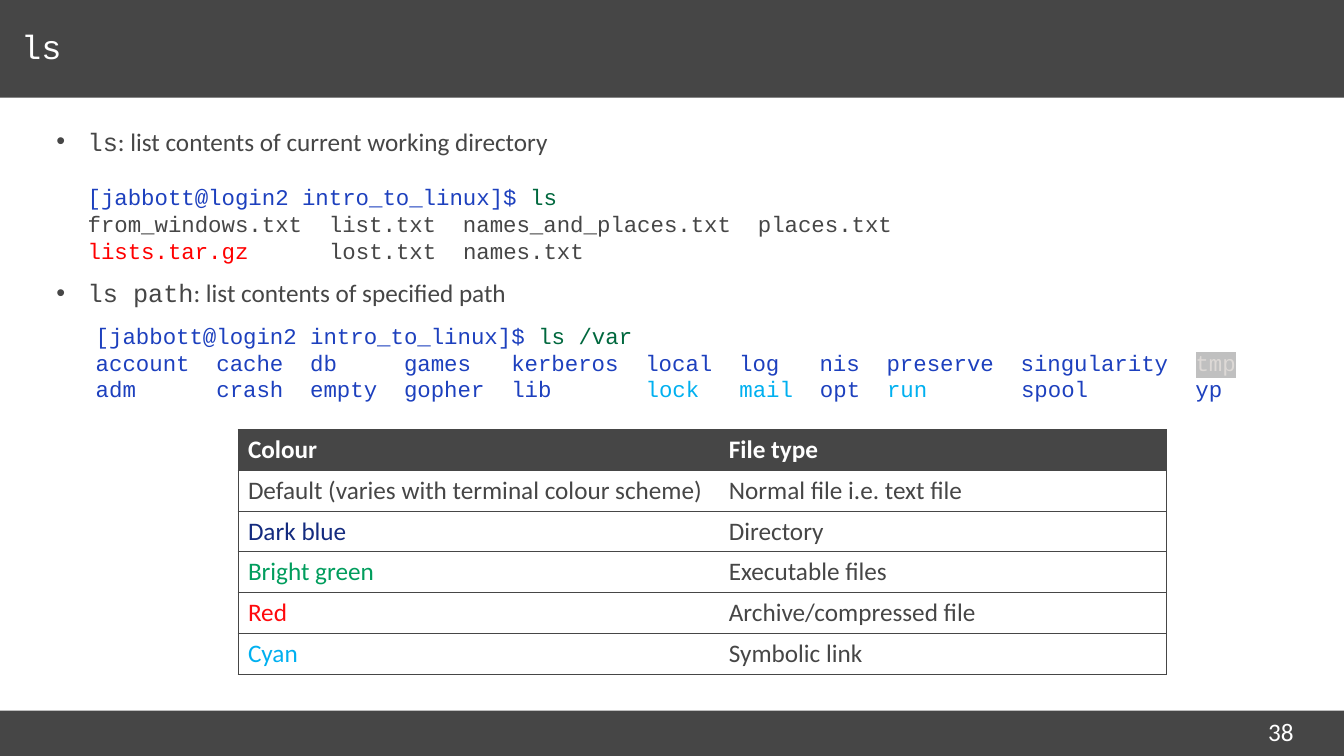
from copy import deepcopy
from lxml import etree
from pptx import Presentation
from pptx import util as u
from pptx.dml.color import RGBColor
from pptx.enum import shapes, text
from pptx.oxml import ns

GREY = RGBColor(0x46, 0x46, 0x46)
WHITE = RGBColor(0xFF, 0xFF, 0xFF)
PALE = RGBColor(0xDD, 0xD9, 0xD6)
SILVER = RGBColor(0xC0, 0xC0, 0xC0)
BLUE = RGBColor(0x1D, 0x40, 0xBE)
NAVY = RGBColor(0x14, 0x2B, 0x7F)
CYAN = RGBColor(0x00, 0xB0, 0xF0)
PINE = RGBColor(0x00, 0x68, 0x3E)
GREEN = RGBColor(0x01, 0x9D, 0x5D)
RED = RGBColor(0xFF, 0x00, 0x00)
SCARLET = RGBColor(0xFF, 0x0A, 0x0D)

SANS = "Calibri"
MONO = "Courier New"
PROMPT = "[jabbott@login2 intro_to_linux]$ "


def add(parent, tag, **attrs):
    return etree.SubElement(parent, ns.qn(tag), attrs)


class Page:
    """Style and current slide."""

    def __init__(self, deck):
        self.slide = deck.slides.add_slide(deck.slide_layouts[6])

    def style(self, run, font=SANS, size=18, color=GREY, bold=False):
        run.font.name = font
        run.font.size = u.Pt(size)
        run.font.bold = bold
        run.font.color.rgb = color

    def bar(self, top, height):
        bar = self.slide.shapes.add_shape(
            shapes.MSO_SHAPE.RECTANGLE, 0, u.Inches(top),
            u.Inches(13.33), u.Inches(height))
        bar.shadow.inherit = False
        bar.fill.solid()
        bar.fill.fore_color.rgb = GREY
        bar.line.fill.background()

    def box(self, left, top, width, height, inset=0.0):
        box = self.slide.shapes.add_textbox(*map(u.Inches, (left, top, width, height)))
        frame = box.text_frame
        frame.word_wrap = True
        frame.margin_left = frame.margin_right = u.Inches(inset)
        return frame

    def label(self, frame, words, **look):
        frame.text = words
        self.style(frame.paragraphs[0].runs[0], **look)

    def indent(self, para, left, hang=0.0, bullet=False):
        props = para._p.get_or_add_pPr()
        props.set("marL", str(u.Inches(left)))
        props.set("indent", str(-u.Inches(hang)))
        if bullet:
            add(add(props, "a:buClr"), "a:srgbClr", val=str(GREY))
            add(props, "a:buFont", typeface="Arial")
            add(props, "a:buChar", char="•")
        else:
            add(props, "a:buNone")

    def piece(self, para, words, mark=None, **look):
        run = para.add_run()
        run.text = words
        self.style(run, **look)
        if mark is not None:
            glow = etree.Element(ns.qn("a:highlight"))
            add(glow, "a:srgbClr", val=str(mark))
            run._r.rPr.find(ns.qn("a:solidFill")).addnext(glow)

    def wrap(self, para):
        """Start a new line, spaced as 16 pt sans text."""
        probe = para.add_run()
        self.style(probe, size=16)
        para.add_line_break()
        para._p.findall(ns.qn("a:br"))[-1].append(deepcopy(probe._r.rPr))
        para._p.remove(probe._r)

    def code(self, para, lines):
        for row, line in enumerate(lines):
            if row:
                self.wrap(para)
            for words, color, *mark in line:
                self.piece(para, words, *mark, font=MONO, size=16, color=color)

    def edges(self, cell, sides):
        props = cell._tc.get_or_add_tcPr()
        for side in "LRTB":
            edge = add(props, "a:ln" + side, w=str(u.Pt(0.5)))
            if side in sides:
                add(add(edge, "a:solidFill"), "a:srgbClr", val=str(GREY))
            else:
                add(edge, "a:noFill")

    def table(self, left, top, widths, high, rows):
        grid = self.slide.shapes.add_table(
            len(rows), len(widths), u.Inches(left), u.Inches(top),
            u.Inches(sum(widths)), u.Inches(high)).table
        grid.horz_banding = False
        for col, width in zip(grid.columns, widths):
            col.width = u.Inches(width)
        for r, row in enumerate(rows):
            head = r == 0
            for c, (words, color) in enumerate(row):
                cell = grid.cell(r, c)
                self.edges(cell, "TB" + "LR"[c])
                cell.fill.solid()
                cell.fill.fore_color.rgb = GREY if head else WHITE
                self.label(cell.text_frame, words, color=color, bold=head)


def main():
    deck = Presentation()
    deck.slide_width, deck.slide_height = u.Inches(13.33), u.Inches(7.5)
    page = Page(deck)

    # Bars, page number and title
    page.bar(7.05, 0.45)
    page.bar(0, 0.97)
    page.label(page.box(12.48, 7.06, 0.7, 0.25, 0.1), "38", color=WHITE)
    title = page.box(0.21, 0.17, 11.52, 0.64)
    title.vertical_anchor = text.MSO_ANCHOR.MIDDLE
    page.label(title, "ls", font=MONO, size=24, color=WHITE)
    title.paragraphs[0].line_spacing = 0.8

    # Commands and their output
    body = page.box(0.56, 1.2, 12.2, 5.67)
    here, there, var = body.paragraphs[0], body.add_paragraph(), body.add_paragraph()
    for para in (here, there, var):
        para.space_after = u.Pt(4)
        if para is not here:
            para.space_before = u.Pt(6)
    for para, name, gist in (
            (here, "ls", ": list contents of current working directory"),
            (there, "ls path", ": list contents of specified path")):
        page.indent(para, 0.31, 0.31, bullet=True)
        page.piece(para, name, font=MONO)
        page.piece(para, gist)
    page.indent(var, 0.39)

    page.code(here, [
        [],
        [],
        [(PROMPT, BLUE), ("ls", PINE)],
        [("from_windows.txt  list.txt  names_and_places.txt  places.txt", GREY)],
        [("lists.tar.gz      ", RED), ("lost.txt  names.txt", GREY)],
    ])
    page.code(var, [
        [(PROMPT, BLUE), ("ls /var", PINE)],
        [("account  cache  db     games   kerberos  local  log   nis  "
          "preserve  singularity  ", BLUE), ("tmp", PALE, SILVER)],
        [("adm      crash  empty  gopher  lib       ", BLUE),
         ("lock   mail  ", CYAN), ("opt  ", BLUE), ("run", CYAN),
         ("       spool        yp", BLUE)],
    ])

    # Colour key
    key = [
        ("Default (varies with terminal colour scheme)", GREY, "Normal file i.e. text file"),
        ("Dark blue", NAVY, "Directory"),
        ("Bright green", GREEN, "Executable files"),
        ("Red", SCARLET, "Archive/compressed file"),
        ("Cyan", CYAN, "Symbolic link"),
    ]
    rows = [[("Colour", WHITE), ("File type", WHITE)]]
    rows += [[(name, color), (kind, GREY)] for name, color, kind in key]
    page.table(2.36, 4.26, (4.77, 4.44), 2.43, rows)

    deck.save("out.pptx")


if __name__ == "__main__":
    main()
